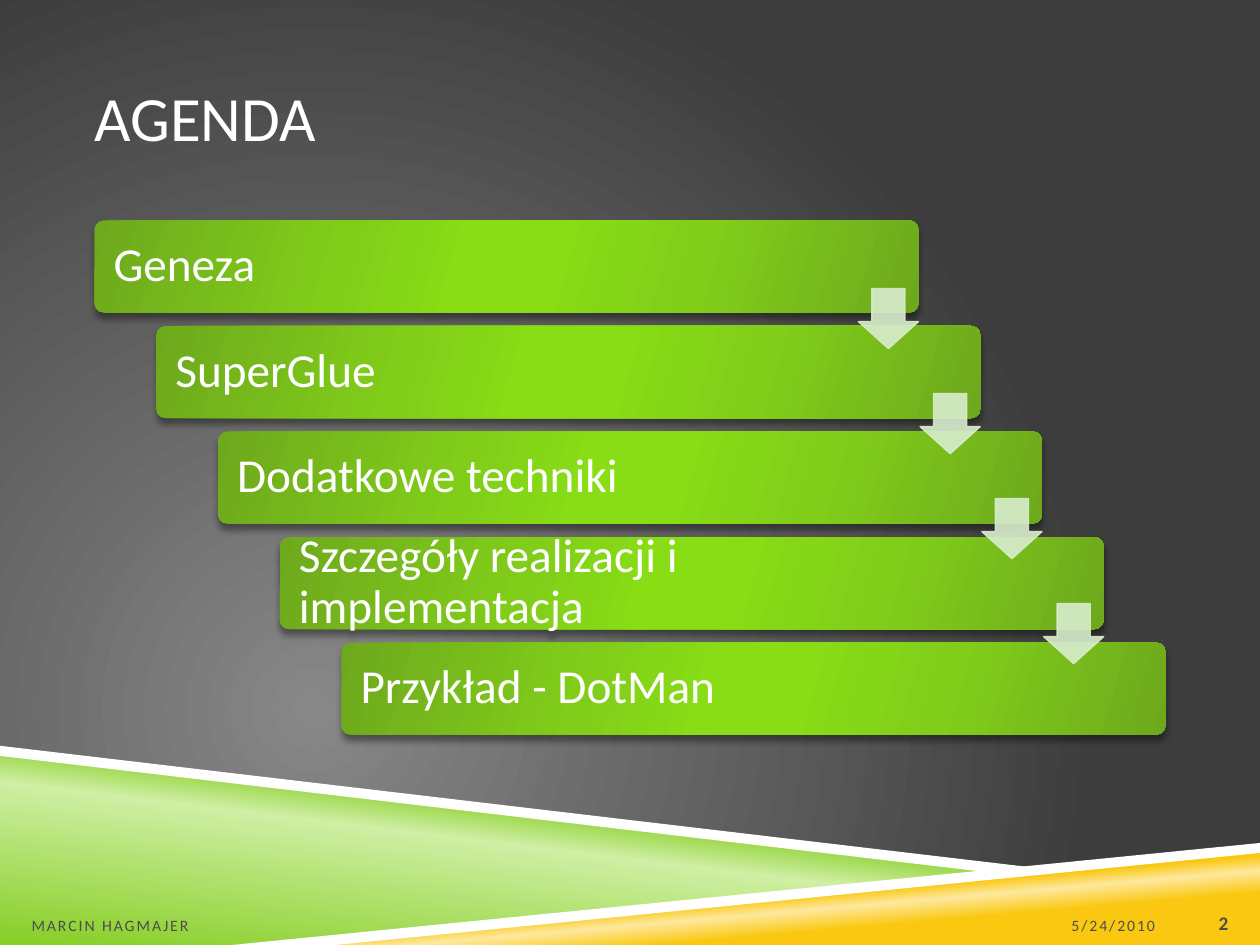
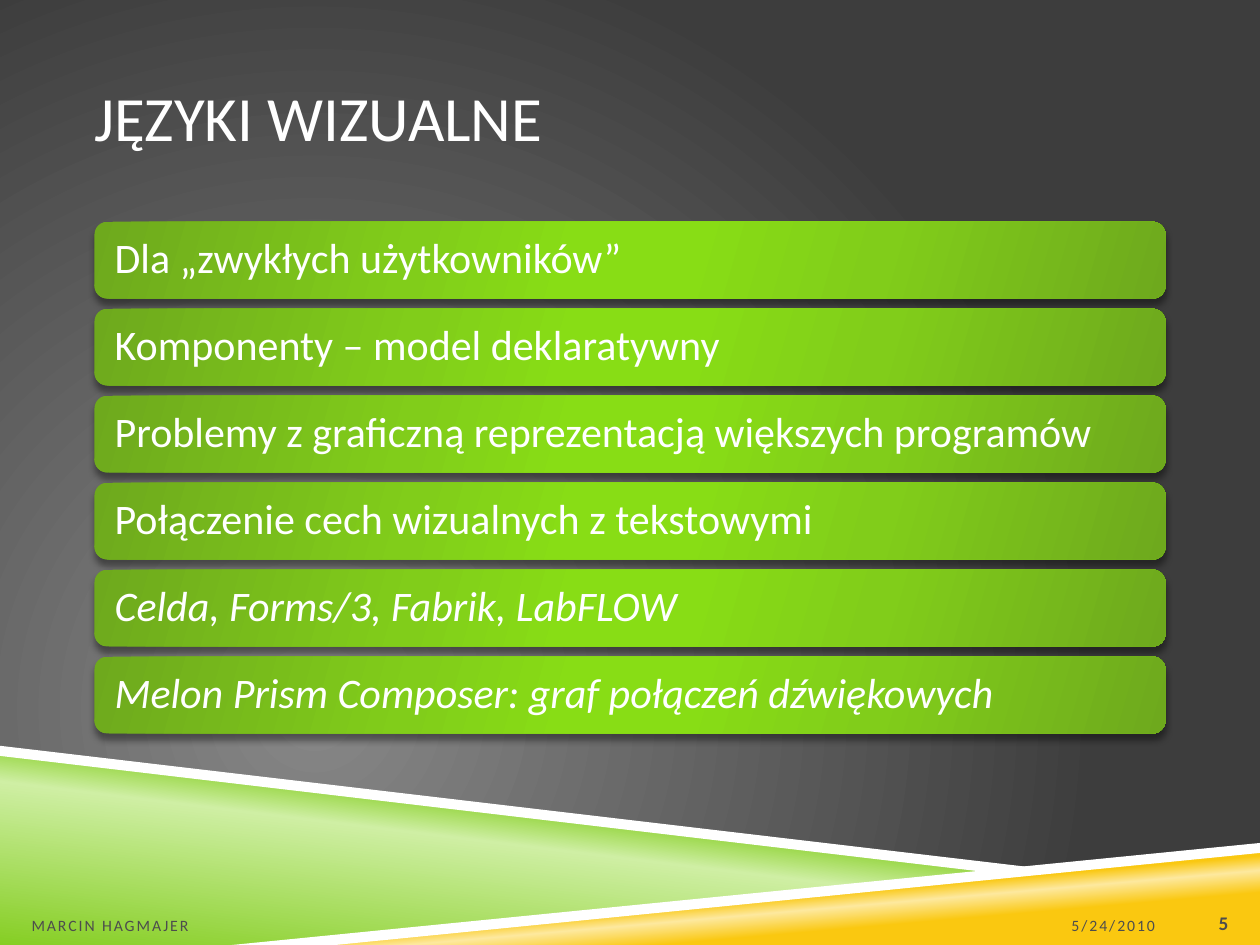
from typing import Any, NamedTuple, Optional

from lxml.etree import SubElement
from pptx import Presentation
from pptx.dml.color import RGBColor
from pptx.enum.shapes import MSO_SHAPE
from pptx.enum.text import MSO_ANCHOR as Anchor, PP_ALIGN as Align
from pptx.oxml.ns import qn
from pptx.shapes.autoshape import Shape
from pptx.slide import Slide, SlideLayout, SlideMaster
from pptx.util import Pt

FONT = "Calibri"
WHITE = RGBColor(0xFF, 0xFF, 0xFF)
FOOTER_GRAY = RGBColor(0x4D, 0x4D, 0x4D)
LIGHT_GRAY = RGBColor(0x87, 0x87, 0x87)
DARK_GRAY = RGBColor(0x3D, 0x3D, 0x3D)
GREEN = RGBColor(0x86, 0xCE, 0x24)
PALE_GREEN = RGBColor(0xCF, 0xEF, 0xA4)
YELLOW = RGBColor(0xFA, 0xC8, 0x10)
PALE_YELLOW = RGBColor(0xFD, 0xE9, 0x9F)
BAR_DARK = RGBColor(0x6E, 0xA9, 0x1D)
BAR_MIDDLE = RGBColor(0x81, 0xCD, 0x1A)
BAR_BRIGHT = RGBColor(0x88, 0xDD, 0x15)
ARROW_GREEN = RGBColor(0xD9, 0xED, 0xCD)

Stops = list[tuple[int, RGBColor]]
BAR_STOPS: Stops = [(0, BAR_DARK), (30, BAR_MIDDLE), (45, BAR_BRIGHT),
                    (55, BAR_BRIGHT), (73, BAR_MIDDLE), (100, BAR_DARK)]
ARROW_SIZE = 34.4
ARROW_TOP = 164.9
ARROW_STEP = 60


class Band(NamedTuple):
    points: list[tuple[float, float]]
    stops: Stops
    angle: int = 0


class FooterPart(NamedTuple):
    left: float
    width: float
    align: Align
    size: int
    bold: bool = False
    spacing: float = 0


class BarStyle(NamedTuple):
    top: float
    width: float
    height: float
    step_right: float
    step_down: float
    corner: float
    size: int
    margin_right: float


class Bar(NamedTuple):
    text: str
    italic: bool = False


BANDS = [
    Band([(0, 429.8), (570.2, 498.2), (144, 540), (0, 540)],
         [(0, GREEN), (52, PALE_GREEN), (66, GREEN)], 277),
    Band([(142.6, 540), (720, 483.8), (720, 540)],
         [(28, YELLOW), (40, PALE_YELLOW), (48, YELLOW)], 265),
    Band([(0, 426.2), (0, 432), (568.8, 499), (599, 496.8)], [(0, WHITE)]),
    Band([(720, 481.7), (132.5, 540), (191.5, 540), (720, 487.4)], [(0, WHITE)]),
]
DATE = FooterPart(504, 156, Align.RIGHT, 9, spacing=1.1)
AUTHOR = FooterPart(18, 228, Align.LEFT, 9, spacing=1.1)
NUMBER = FooterPart(666, 36, Align.RIGHT, 11, bold=True)

STAIRS = BarStyle(126, 470.9, 52.6, 35.28, 60.3, 0.1, 27, 78.5)
STACK = BarStyle(126.7, 612, 43.9, 0, 49.7, 0.1667, 24, 9.4)

AGENDA = [Bar("Geneza"), Bar("SuperGlue"), Bar("Dodatkowe techniki"),
          Bar("Szczegóły realizacji i implementacja"), Bar("Przykład - DotMan")]
VISUAL_LANGUAGES = [
    Bar("Dla „zwykłych użytkowników”"),
    Bar("Komponenty – model deklaratywny"),
    Bar("Problemy z graficzną reprezentacją większych programów"),
    Bar("Połączenie cech wizualnych z tekstowymi"),
    Bar("Celda, Forms/3, Fabrik, LabFLOW", italic=True),
    Bar("Melon Prism Composer: graf połączeń dźwiękowych", italic=True),
]


def apply_format(target: Any, values: dict[str, Any]) -> None:
    for name, value in values.items():
        setattr(target, name, value)


def set_gradient(owner: Any, element: Any, stops: Stops,
                 angle: Optional[int] = None) -> None:
    """Fill with the stops, along the angle or, without one, as a circle."""
    owner.fill.gradient()
    gradient = element.find(".//" + qn("a:gradFill"))
    for child in list(gradient):
        gradient.remove(child)
    stop_list = SubElement(gradient, qn("a:gsLst"))
    for position, color in stops:
        stop = SubElement(stop_list, qn("a:gs"), pos=str(position * 1000))
        SubElement(stop, qn("a:srgbClr"), val=str(color))
    if angle is None:
        circle = SubElement(gradient, qn("a:path"), path="circle")
        SubElement(circle, qn("a:fillToRect"),
                   l="50000", t="100000", r="100000", b="50000")
    else:
        SubElement(gradient, qn("a:lin"), ang=str(angle * 60000), scaled="0")


def set_solid(shape: Shape, color: RGBColor) -> None:
    shape.fill.solid()
    shape.fill.fore_color.rgb = color


def add_drop_shadow(shape: Shape) -> None:
    effects = shape.element.spPr.find(qn("a:effectLst"))
    shadow = SubElement(effects, qn("a:outerShdw"), blurRad=str(Pt(4)),
                        dist=str(Pt(3.3)), dir="5400000", rotWithShape="0")
    color = SubElement(shadow, qn("a:srgbClr"), val="000000")
    SubElement(color, qn("a:alpha"), val="40000")


def write_text(shape: Shape, text: str, color: RGBColor, frame_format: dict[str, Any],
               paragraph_format: dict[str, Any], font_format: dict[str, Any]) -> None:
    frame = shape.text_frame
    apply_format(frame, {"word_wrap": True, **frame_format})
    paragraph = frame.paragraphs[0]
    apply_format(paragraph, paragraph_format)
    run = paragraph.add_run()
    run.text = text
    apply_format(run.font, {"name": FONT, **font_format})
    run.font.color.rgb = color


def add_band(slide: Slide, master: SlideMaster, index: int, band: Band) -> None:
    """Draw a band and move it to the master, behind everything else."""
    points = [(Pt(x), Pt(y)) for x, y in band.points]
    builder = slide.shapes.build_freeform(*points[0])
    builder.add_line_segments(points[1:], close=True)
    shape = builder.convert_to_shape()
    shape.shadow.inherit = False
    shape.line.fill.background()
    if len(band.stops) == 1:
        set_solid(shape, band.stops[0][1])
    else:
        set_gradient(shape, shape.element, band.stops, band.angle)
    shape.element.nvSpPr.cNvPr.set("id", str(100 + index))
    master.shapes.element.insert(2 + index, shape.element)


def add_footer_part(slide: Slide, part: FooterPart, text: str) -> None:
    box = slide.shapes.add_textbox(Pt(part.left), Pt(505.4), Pt(part.width), Pt(28.8))
    write_text(box, text, FOOTER_GRAY,
               {"vertical_anchor": Anchor.BOTTOM, "margin_left": 0, "margin_right": 0,
                "margin_top": Pt(3.6), "margin_bottom": 0},
               {"alignment": part.align},
               {"size": Pt(part.size), "bold": part.bold})
    if part.spacing:
        for properties in box.element.iter(qn("a:rPr")):
            properties.set("spc", str(round(part.spacing * 100)))


def add_slide(presentation: Any, layout: SlideLayout, title: str, number: int) -> Slide:
    slide = presentation.slides.add_slide(layout)
    write_text(slide.shapes.title, title, WHITE,
               {"vertical_anchor": Anchor.MIDDLE, "margin_left": 0, "margin_right": 0},
               {"alignment": Align.LEFT}, {"size": Pt(36)})
    for part, text in ((DATE, "5/24/2010"), (AUTHOR, "MARCIN HAGMAJER"),
                       (NUMBER, str(number))):
        add_footer_part(slide, part, text)
    return slide


def add_bars(slide: Slide, bars: list[Bar], style: BarStyle) -> None:
    for index, bar in enumerate(bars):
        shape = slide.shapes.add_shape(
            MSO_SHAPE.ROUNDED_RECTANGLE,
            Pt(54 + index * style.step_right), Pt(style.top + index * style.step_down),
            Pt(style.width), Pt(style.height))
        shape.adjustments[0] = style.corner
        shape.shadow.inherit = False
        shape.line.fill.background()
        set_gradient(shape, shape.element, BAR_STOPS, 16)
        add_drop_shadow(shape)
        write_text(shape, bar.text, WHITE,
                   {"vertical_anchor": Anchor.MIDDLE, "margin_left": Pt(9.4),
                    "margin_right": Pt(style.margin_right),
                    "margin_top": 0, "margin_bottom": 0},
                   {"alignment": Align.LEFT, "line_spacing": 0.9},
                   {"size": Pt(style.size), "italic": bar.italic})


def add_step_arrows(slide: Slide, count: int, style: BarStyle) -> None:
    """Put an arrow at the right end of each bar but the last."""
    for index in range(count):
        bar_right = 54 + index * style.step_right + style.width
        arrow = slide.shapes.add_shape(
            MSO_SHAPE.DOWN_ARROW, Pt(bar_right - ARROW_SIZE),
            Pt(ARROW_TOP + index * ARROW_STEP), Pt(ARROW_SIZE), Pt(ARROW_SIZE))
        arrow.adjustments[0] = 0.55
        arrow.adjustments[1] = 0.45
        arrow.shadow.inherit = False
        set_solid(arrow, ARROW_GREEN)
        arrow.line.color.rgb = ARROW_GREEN
        arrow.line.width = Pt(0.75)
        for color in arrow.element.spPr.iter(qn("a:srgbClr")):
            SubElement(color, qn("a:alpha"), val="90000")


def main() -> None:
    presentation = Presentation()
    apply_format(presentation, {"slide_width": Pt(720), "slide_height": Pt(540)})
    master = presentation.slide_master
    set_gradient(master.background, master.element, [(0, LIGHT_GRAY), (100, DARK_GRAY)])
    layout = presentation.slide_layouts.get_by_name("Title Only")
    apply_format(layout.placeholders[0], {"left": Pt(54), "top": Pt(21.6),
                                          "width": Pt(612), "height": Pt(90)})

    agenda = add_slide(presentation, layout, "AGENDA", 2)
    for index, band in enumerate(BANDS):
        add_band(agenda, master, index, band)
    add_bars(agenda, AGENDA, STAIRS)
    add_step_arrows(agenda, len(AGENDA) - 1, STAIRS)

    languages = add_slide(presentation, layout, "JĘZYKI WIZUALNE", 5)
    add_bars(languages, VISUAL_LANGUAGES, STACK)

    presentation.save("out.pptx")


if __name__ == "__main__":
    main()
